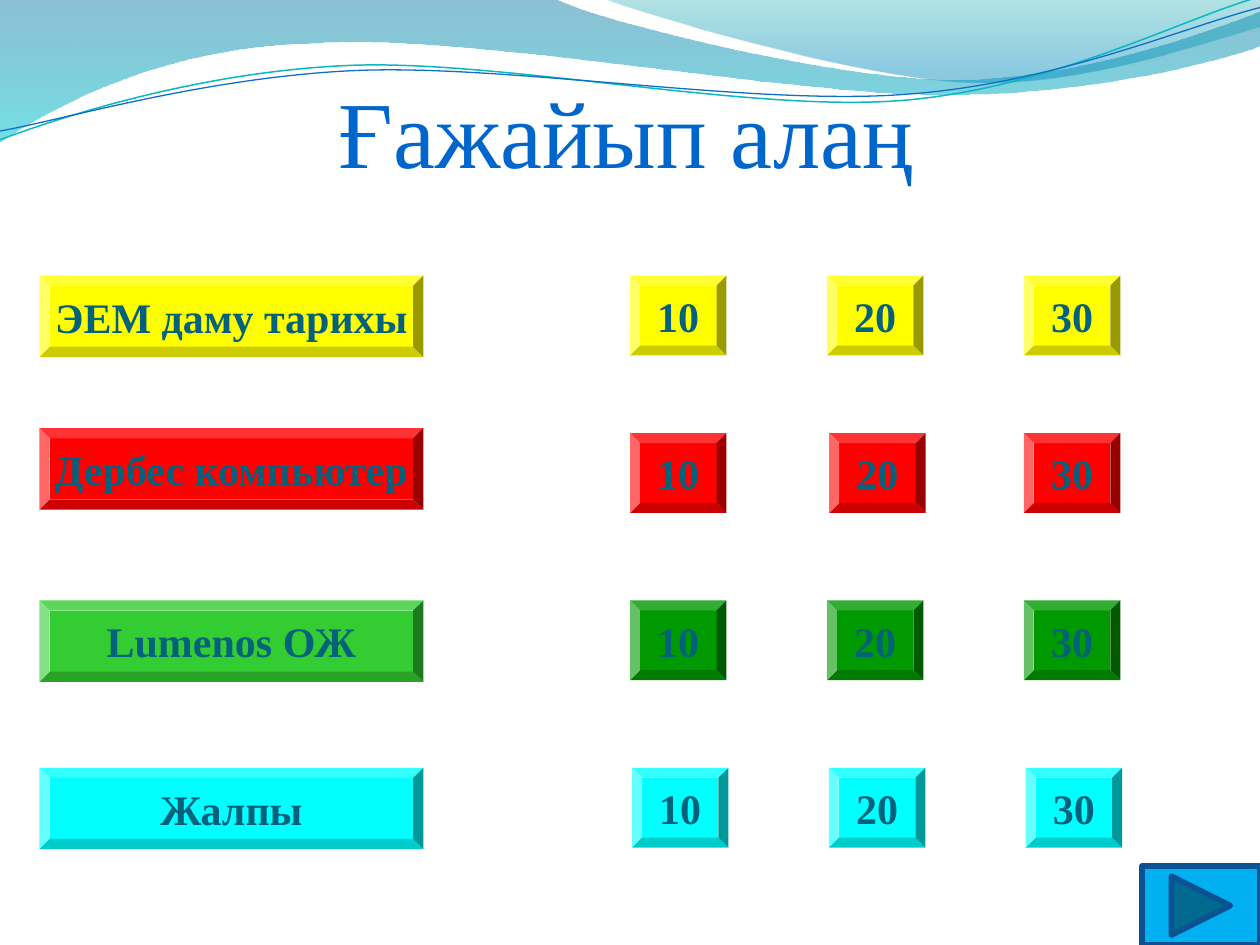
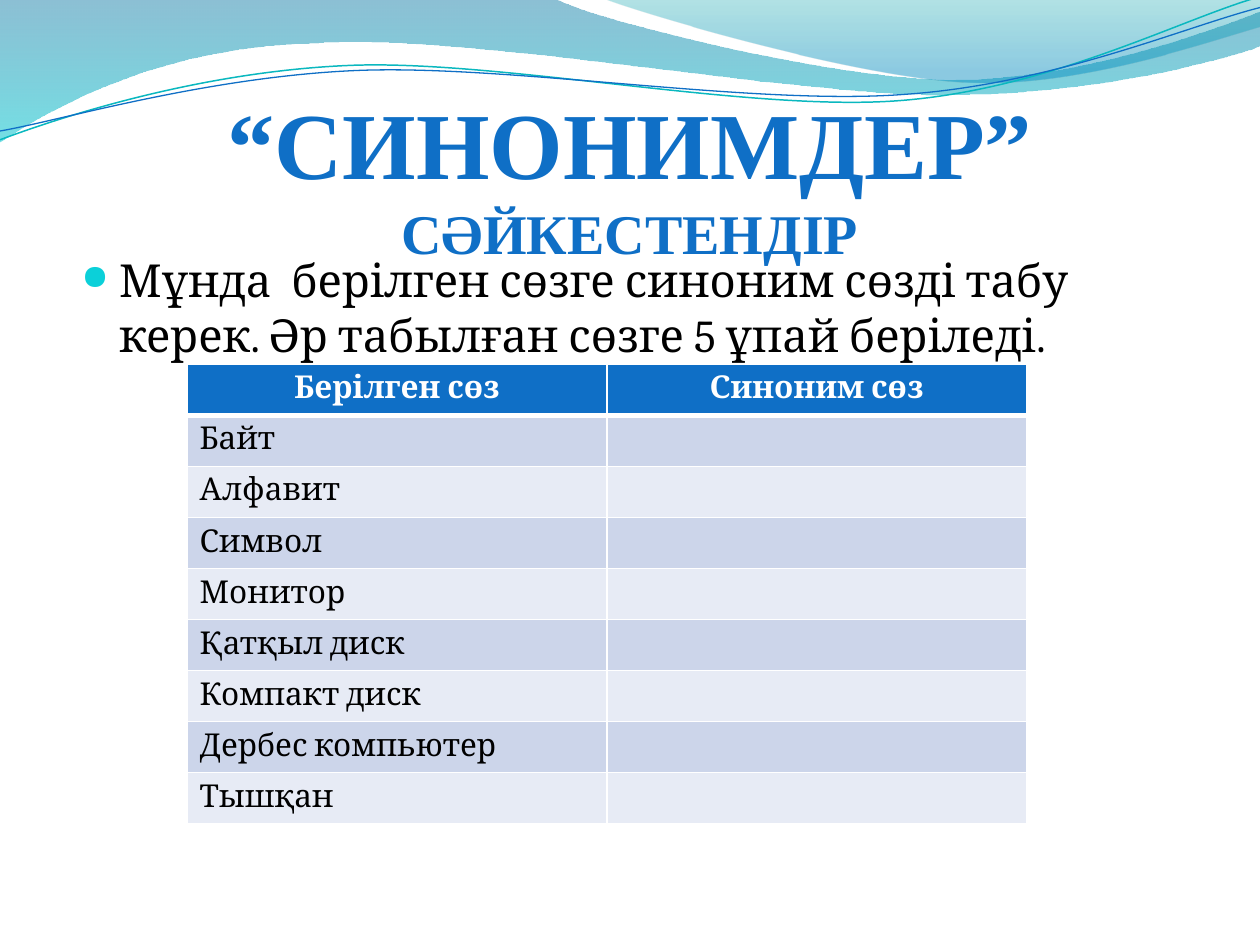
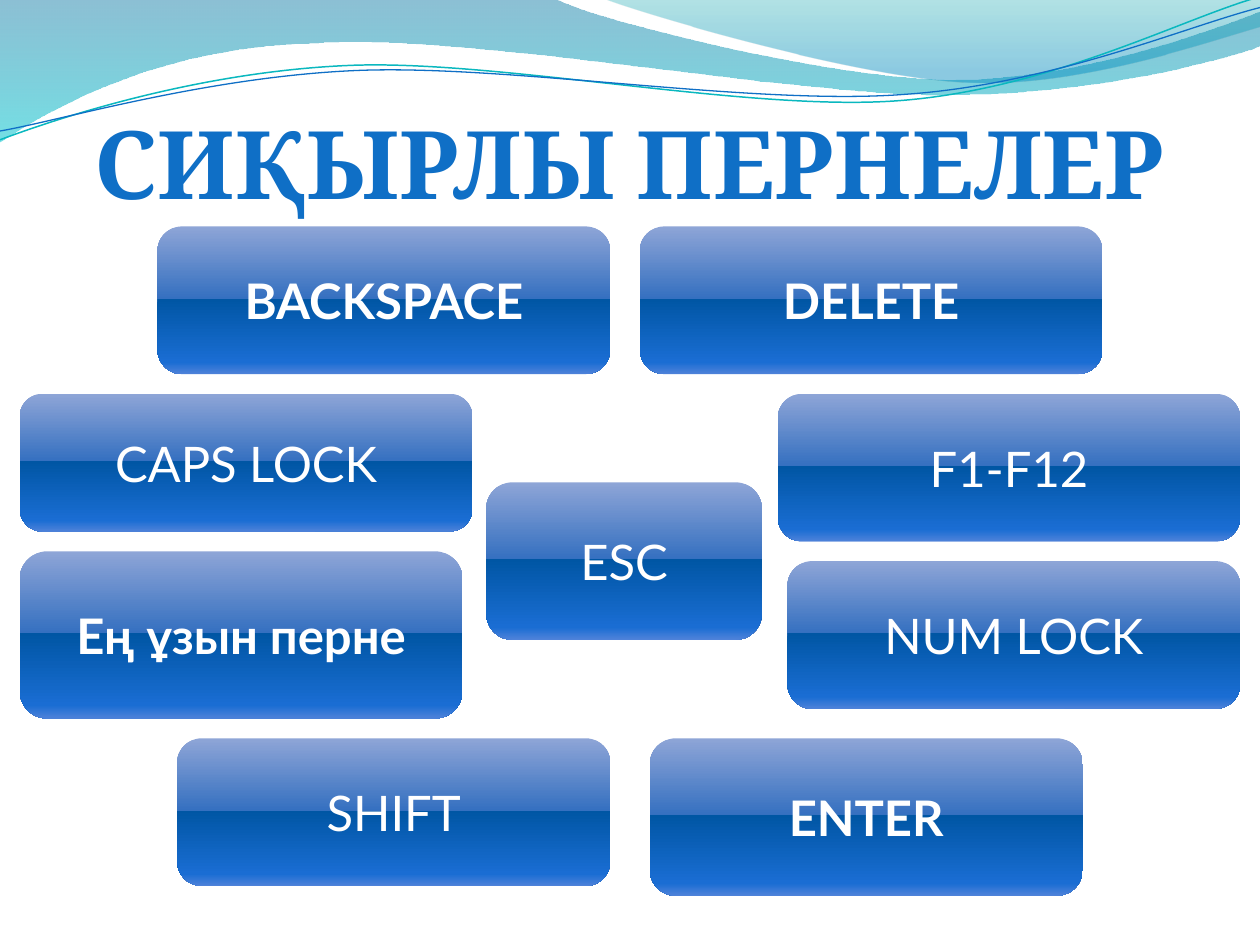
from dataclasses import dataclass
from itertools import chain, product

from lxml.etree import SubElement
from pptx import Presentation
from pptx.dml.color import RGBColor as Rgb
from pptx.enum.shapes import MSO_SHAPE as Kind
from pptx.enum.text import MSO_ANCHOR as Anchor, PP_ALIGN as Align
from pptx.oxml.ns import qn
from pptx.util import Emu, Inches, Pt

WIDE, HIGH = Inches(10), Inches(7.5)
CELL = WIDE // 64  # the slide is a grid of 64 columns and 48 rows
TENTH = WIDE // 10

WHITE = Rgb(0xFF, 0xFF, 0xFF)
BLACK = Rgb(0x00, 0x00, 0x00)
BLUE = Rgb(0x0F, 0x6F, 0xC6)
AZURE = Rgb(0x00, 0x66, 0xCC)
NAVY = Rgb(0x0B, 0x52, 0x92)
SKY = Rgb(0x00, 0xB0, 0xF0)
INK = Rgb(0x04, 0x61, 0x7B)
TEAL = Rgb(0x0A, 0xB8, 0xBF)
AQUA = Rgb(0x0B, 0xD0, 0xD9)
YELLOW = Rgb(0xFF, 0xFF, 0x00)
RED = Rgb(0xFF, 0x00, 0x00)
LIME = Rgb(0x33, 0xCC, 0x33)
GREEN = Rgb(0x00, 0x99, 0x00)
CYAN = Rgb(0x00, 0xFF, 0xFF)
STRIPES = Rgb(0xCC, 0xD5, 0xEA), Rgb(0xE7, 0xEB, 0xF5)

TIMES, SERIF, SANS = "Times New Roman", "Cambria", "Lato"

# Gradient stops: place, colour and opacity, all in percent
GLOSS = (
    (0, Rgb(0x8E, 0xA5, 0xD7), 100), (49, Rgb(0x35, 0x70, 0xC0), 100),
    (49, Rgb(0x00, 0x56, 0xA4), 100), (92, Rgb(0x1A, 0x6D, 0xD3), 100),
    (100, Rgb(0x4E, 0x82, 0xD9), 100),
)
SEA = (0, Rgb(0x00, 0x74, 0xA1), 45), (100, Rgb(0x00, 0xC6, 0xCF), 55)
FOAM = (0, Rgb(0x00, 0xA1, 0xA9), 30), (80, Rgb(0x00, 0x8B, 0xBF), 45)


@dataclass(frozen=True)
class Box:
    """A place on the grid, in cells."""
    left: float
    top: float
    wide: float
    high: float

    def place(self) -> tuple:
        return tuple(Emu(round(n * CELL))
                     for n in (self.left, self.top, self.wide, self.high))


@dataclass(frozen=True)
class Font:
    face: str
    size: float
    color: Rgb
    bold: bool = False


@dataclass(frozen=True)
class Wave:
    """Steps of 2 numbers are lines, of 6 are curves; unit: a tenth of the width."""
    start: tuple
    steps: tuple
    stops: tuple = ()
    color: Rgb = WHITE
    line: float = 0


@dataclass(frozen=True)
class Topic:
    name: str
    top: float
    tint: Rgb
    dark: Rgb
    lift: float = 0
    shifts: tuple = (0, 0, 0)


@dataclass(frozen=True)
class Key:
    name: str
    box: Box
    bold: bool = False


WAVES = (
    Wave((0, 0), ((4.4, -0.01), (4.76, 0.17, 6.64, 0.63, 7.58, 0.63),
                  (8.53, 0.63, 9.58, 0.26, 10, 0.09), (10.01, 0.36),
                  (9.83, 0.44, 8.7, 0.76, 7.46, 0.75),
                  (6.22, 0.75, 3.82, 0.28, 2.57, 0.34),
                  (1.29, 0.36, 0.46, 0.83, -0.01, 1.13)), SEA),
    Wave((4.79, -0.01), ((5.09, 0.11, 6.82, 0.62, 7.69, 0.65),
                         (8.56, 0.69, 9.61, 0.32, 10, 0.21), (10, 0)), FOAM),
    Wave((0, 1.11), ((0.48, 0.93, 1.58, 0.57, 2.77, 0.52),
                     (3.95, 0.47, 5.93, 0.89, 7.13, 0.8),
                     (8.33, 0.71, 9.38, 0.15, 9.98, -0.02)), color=TEAL, line=0.85),
    Wave((0, 1.04), ((0.47, 0.96, 1.64, 0.61, 2.83, 0.56),
                     (4.03, 0.51, 5.97, 0.84, 7.17, 0.75),
                     (8.36, 0.67, 9.41, 0.21, 10, 0.06)), color=BLUE, line=0.75),
)
TOPICS = (
    Topic("ЭЕМ даму тарихы", 14, YELLOW, YELLOW),
    Topic("Дербес компьютер", 22, RED, RED, 0.25, (0, 0.12, 0)),
    Topic("Lumenos ОЖ", 30.5, LIME, GREEN),
    Topic("Жалпы", 39, CYAN, CYAN, shifts=(0.1, 0.1, 0.1)),
)
WORDS = ("Байт", "Алфавит", "Символ", "Монитор", "Қатқыл диск",
         "Компакт диск", "Дербес компьютер", "Тышқан")
KEYS = (
    Key("BACKSPACE", Box(8, 11.5, 23, 7.5), True),
    Key("DELETE", Box(32.5, 11.5, 23.5, 7.5), True),
    Key("CAPS LOCK", Box(1, 20, 23, 7)),
    Key("F1-F12", Box(39.5, 20, 23.5, 7.5)),
    Key("Ең ұзын перне", Box(1, 28, 22.5, 8.5), True),
    Key("ENTER", Box(33, 37.5, 22, 8), True),
    Key("SHIFT", Box(9, 37.5, 22, 7.5)),
    Key("NUM LOCK", Box(40, 28.5, 23, 7.5)),
    Key("ESC", Box(24.7, 24.5, 14, 8)),
)


def write(para, text: str, font: Font, align=Align.CENTER) -> None:
    para.alignment = align
    run = para.add_run()
    run.text = text
    run.font.name, run.font.size = font.face, Pt(font.size)
    run.font.bold, run.font.color.rgb = font.bold, font.color


def tint(parent, color: Rgb, alpha: float = 100) -> None:
    """Add a colour with an opacity to an XML element."""
    node = SubElement(parent, qn("a:srgbClr"), val=str(color))
    if alpha < 100:
        SubElement(node, qn("a:alpha"), val=str(alpha * 1000))


def blend(shape, stops: tuple) -> None:
    """Fill with a gradient that runs from top to bottom."""
    shape.fill.gradient()
    shape.fill.gradient_angle = 270
    group = shape.element.spPr.find(qn("a:gradFill")).find(qn("a:gsLst"))
    group.clear()
    for spot, color, alpha in stops:
        tint(SubElement(group, qn("a:gs"), pos=str(spot * 1000)), color, alpha)


def bend(shape, steps: tuple) -> None:
    """Join each three lines that stand for a curve into one Bezier curve."""
    outline = next(shape.element.iter(qn("a:path")))
    lines = iter(outline.findall(qn("a:lnTo")))
    for step in steps:
        curve = next(lines)
        if len(step) == 6:
            curve.tag = qn("a:cubicBezTo")
            for line in (next(lines), next(lines)):
                curve.append(line[0])
                outline.remove(line)


def draw_wave(slide, wave: Wave):
    flat = [round(n * TENTH) for n in chain(wave.start, *wave.steps)]
    first, *rest = zip(flat[::2], flat[1::2])
    pen = slide.shapes.build_freeform(*first, scale=1.0)
    pen.add_line_segments(rest, close=bool(wave.stops))
    shape = pen.convert_to_shape()
    bend(shape, wave.steps)
    shape.shadow.inherit = False
    if wave.stops:
        blend(shape, wave.stops)
        shape.line.fill.background()
    else:
        shape.fill.background()
        shape.line.color.rgb, shape.line.width = wave.color, Pt(wave.line)
    return shape


def add_frame(slide, box: Box, anchor=Anchor.TOP):
    frame = slide.shapes.add_textbox(*box.place()).text_frame
    frame.word_wrap, frame.vertical_anchor = True, anchor
    return frame


def add_title(slide, box: Box, lines: tuple, anchor=Anchor.BOTTOM):
    frame = add_frame(slide, box, anchor)
    for i, (text, font) in enumerate(lines):
        para = frame.add_paragraph() if i else frame.paragraphs[0]
        write(para, text, font)
    return frame


def add_shape(slide, kind, box: Box):
    shape = slide.shapes.add_shape(kind, *box.place())
    shape.shadow.inherit = False
    shape.line.fill.background()
    shape.text_frame.vertical_anchor = Anchor.MIDDLE
    return shape


def add_bevel(slide, box: Box, text: str, color: Rgb) -> None:
    shape = add_shape(slide, Kind.BEVEL, box)
    shape.fill.solid()
    shape.fill.fore_color.rgb = color
    shape.text_frame.word_wrap = False
    write(shape.text_frame.paragraphs[0], text, Font(TIMES, 24, INK, True))


def add_key(slide, key: Key) -> None:
    shape = add_shape(slide, Kind.ROUNDED_RECTANGLE, key.box)
    blend(shape, GLOSS)
    write(shape.text_frame.paragraphs[0], key.name, Font(SANS, 28, WHITE, key.bold))


def add_bullet(para) -> None:
    para.space_before = Pt(5)
    props = para._p.get_or_add_pPr()
    props.set("marL", str(Inches(0.3)))
    props.set("indent", str(-Inches(0.3)))
    tint(SubElement(props, qn("a:buClr")), AQUA)
    SubElement(props, qn("a:buSzPct"), val="76000")
    SubElement(props, qn("a:buChar"), char="●")


def add_edges(cell, head: bool) -> None:
    """Draw white cell borders, with a thick one under the head row."""
    props = cell._tc.get_or_add_tcPr()
    widths = {"a:lnL": 1, "a:lnR": 1}
    widths |= {"a:lnT": 1, "a:lnB": 3} if head else {"a:lnB": 1}
    for name, width in widths.items():
        edge = SubElement(props, qn(name), w=str(Pt(width)))
        tint(SubElement(edge, qn("a:solidFill")), WHITE)


def build_field(slide) -> None:
    frame = add_title(slide, Box(3, 1.5, 57.6, 8),
                      (("Ғажайып алаң", Font(TIMES, 54, AZURE)),))
    frame.margin_left = frame.margin_right = frame.margin_bottom = 0
    for topic in TOPICS:
        add_bevel(slide, Box(2, topic.top - topic.lift, 19.5, 4.13),
                  topic.name, topic.tint)
    for topic, i in product(TOPICS, range(3)):
        add_bevel(slide, Box(32 + 10 * i + topic.shifts[i], topic.top, 4.9, 4.05),
                  str(10 * (i + 1)), topic.dark)
    button = add_shape(slide, Kind.ACTION_BUTTON_FORWARD_OR_NEXT, Box(58, 44, 6, 4))
    button.fill.solid()
    button.fill.fore_color.rgb = SKY
    button.line.color.rgb, button.line.width = NAVY, Pt(3.15)


def build_pairs(slide) -> None:
    para = add_frame(slide, Box(3.5, 12.5, 57.6, 30.7)).paragraphs[0]
    add_bullet(para)
    write(para, "Мұнда  берілген сөзге синоним сөзді табу керек. "
          "Әр табылған сөзге 5 ұпай беріледі.", Font(SERIF, 26, BLACK), Align.LEFT)
    add_title(slide, Box(3, 3.9, 58, 9.9), (
        ("“СИНОНИМДЕР”", Font(TIMES, 54, BLUE, True)),
        ("СӘЙКЕСТЕНДІР", Font(TIMES, 32, BLUE, True))))
    rows = [("Берілген сөз", "Синоним сөз")] + [(word, "") for word in WORDS]
    table = slide.shapes.add_table(
        len(rows), 2, *Box(9.5, 18.5, 42.65, 23.35).place()).table
    for (r, row), c in product(enumerate(rows), range(2)):
        cell = table.cell(r, c)
        add_edges(cell, not r)
        cell.fill.solid()
        cell.fill.fore_color.rgb = STRIPES[(r - 1) % 2] if r else BLUE
        if row[c]:
            write(cell.text_frame.paragraphs[0], row[c],
                  Font(SERIF, 18, BLACK if r else WHITE, not r),
                  Align.LEFT if r else Align.CENTER)


def build_keys(slide) -> None:
    add_title(slide, Box(3, 5, 58, 6.5),
              (("СИҚЫРЛЫ ПЕРНЕЛЕР", Font(SERIF, 54, BLUE, True)),), Anchor.TOP)
    for key in KEYS:
        add_key(slide, key)


def main() -> None:
    deck = Presentation()
    deck.slide_width, deck.slide_height = WIDE, HIGH
    blank = deck.slide_layouts[6]
    slides = [deck.slides.add_slide(blank) for _ in range(3)]
    for wave in WAVES:  # the waves move to the layout that all slides share
        blank.shapes.element.append(draw_wave(slides[0], wave).element)
    for build, slide in zip((build_field, build_pairs, build_keys), slides):
        build(slide)
    deck.save("out.pptx")


if __name__ == "__main__":
    main()
